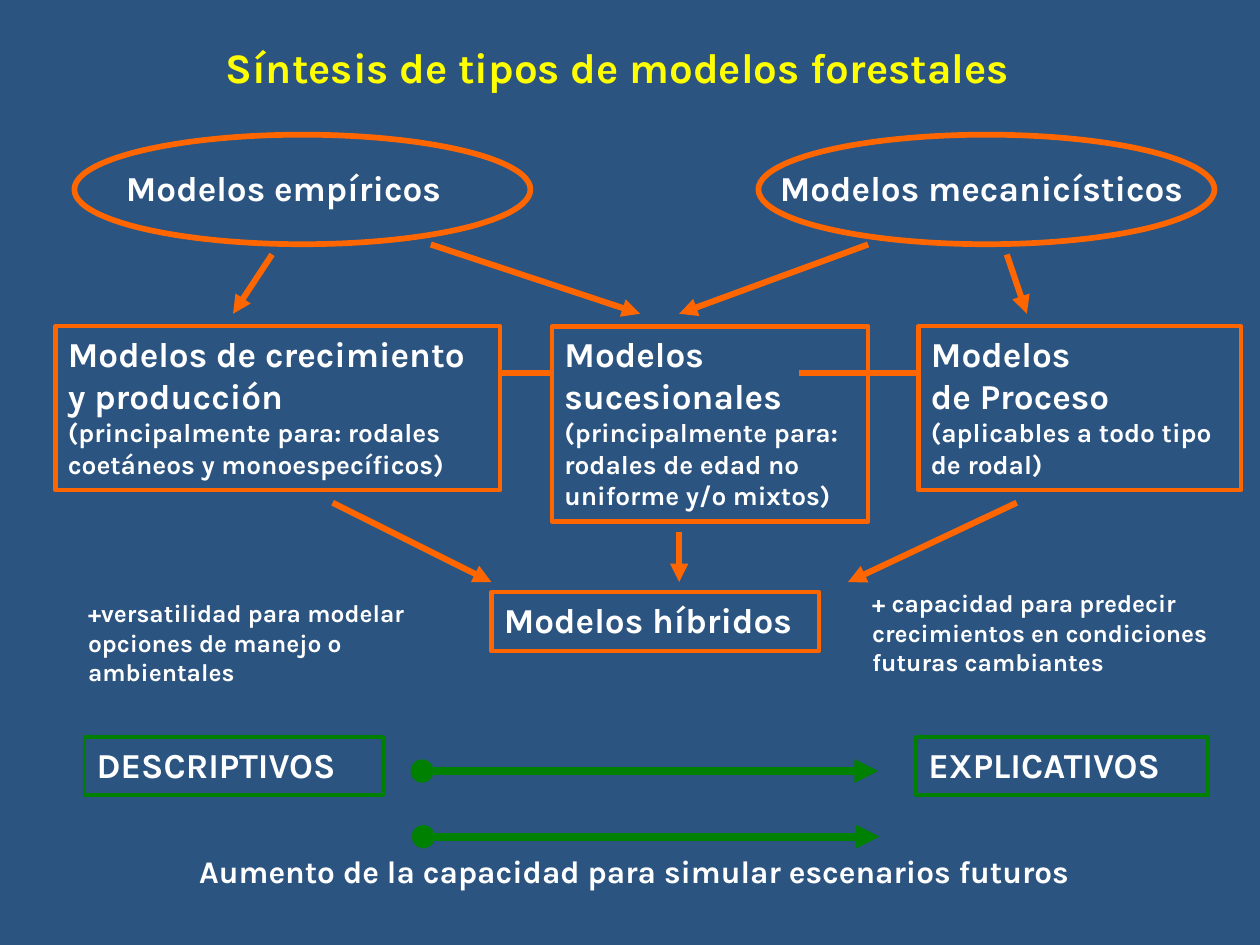
from lxml import etree
from pptx import Presentation
from pptx import util as u
from pptx.dml.color import RGBColor
from pptx.enum import shapes, text
from pptx.oxml.ns import qn

BLUE, ORANGE, GREEN = "2B5481", "FF6600", "008000"
WHITE, YELLOW = "FFFFFF", "FFFF00"
FONT = "Karla"
LEFT, CENTER = text.PP_ALIGN.LEFT, text.PP_ALIGN.CENTER

# Plain text: left, top, width, height, size, colour, alignment, wording
LABELS = [
    (121.7, 20.2, 483, 36, 24, YELLOW, LEFT, "Síntesis de tipos de modelos forestales"),
    (64.8, 91.4, 201, 31, 20, WHITE, LEFT, "Modelos empíricos"),
    (438.5, 91.4, 250, 31, 20, WHITE, LEFT, "Modelos mecanicísticos"),
    (43.2, 338.4, 215.3, 57.6, 14, WHITE, LEFT,
     "+versatilidad para modelar opciones de manejo o ambientales"),
    (491.3, 332.6, 215.3, 57.6, 14, WHITE, LEFT,
     "+ capacidad para predecir crecimientos en condiciones futuras cambiantes"),
    (19.4, 483.1, 686.2, 28.8, 18, WHITE, CENTER,
     "Aumento de la capacidad para simular escenarios futuros"),
]

# Framed boxes: left, top, width, height, line colour, line width, headings, details
BOXES = [
    (31.7, 186.5, 254.2, 93.6, ORANGE, 2.5, ["Modelos de crecimiento", "y producción"],
     ["(principalmente para: rodales coetáneos y monoespecíficos)"]),
    (315.4, 186.5, 180.7, 111.6, ORANGE, 2.5, ["Modelos", "sucesionales"],
     ["(principalmente para:", "rodales de edad no", "uniforme y/o mixtos)"]),
    (524.9, 186.5, 184.3, 93.6, ORANGE, 2.5, ["Modelos", "de Proceso"],
     ["(aplicables a todo tipo", "de rodal)"]),
    (280.8, 338.4, 187.2, 33.8, ORANGE, 2.5, ["Modelos híbridos"], []),
    (48.2, 421.2, 170.6, 33.1, GREEN, 2, ["DESCRIPTIVOS"], []),
    (523.4, 421.2, 167, 33.1, GREEN, 2, ["EXPLICATIVOS"], []),
]

ELLIPSE_LEFTS = [42.5, 433.4]
ELLIPSE_TOP, ELLIPSE_WIDTH, ELLIPSE_HEIGHT = 77, 260.6, 62.6

# Lines: x1, y1, x2, y2
MODEL_ARROWS = [
    (155.5, 145.4, 133.2, 179.3),
    (246.2, 139.7, 365.8, 179.3),
    (496.1, 139.7, 388.1, 179.3),
    (575.3, 145.4, 586.8, 179.3),
    (190.1, 287.3, 280.8, 332.6),
    (388.1, 303.8, 388.1, 332.6),
    (581, 287.3, 484.6, 332.6),
]
LINKS = [(286.6, 213.1, 314.6, 213.1), (456.5, 213.1, 524.2, 213.1)]
TREND_ARROWS = [(241.2, 440.6, 501.8, 440.6), (241.9, 478.1, 502.6, 478.1)]


def color(value):
    return RGBColor.from_string(value)


def write(box, lines, ink=WHITE, align=LEFT):
    """Fill a box with (wording, size) lines."""
    frame = box.text_frame
    frame.word_wrap = True
    frame.vertical_anchor = text.MSO_ANCHOR.TOP
    frame.text = "\n".join(wording for wording, _ in lines)
    for para, (_, size) in zip(frame.paragraphs, lines):
        para.alignment = align
        font = para.runs[0].font
        font.name, font.size, font.bold = FONT, u.Pt(size), True
        font.color.rgb = color(ink)


def add_outline(slide, kind, area, ink, weight):
    shape = slide.shapes.add_shape(kind, *map(u.Pt, area))
    shape.shadow.inherit = False
    shape.fill.background()
    shape.line.color.rgb = color(ink)
    shape.line.width = u.Pt(weight)
    return shape


def add_line(slide, ends, ink, weight, head=None, tail=None):
    line = slide.shapes.add_connector(shapes.MSO_CONNECTOR.STRAIGHT, *map(u.Pt, ends))
    line.line.color.rgb = color(ink)
    line.line.width = u.Pt(weight)
    properties = line.line._get_or_add_ln()
    for tag, kind in (("a:headEnd", head), ("a:tailEnd", tail)):
        if kind:
            etree.SubElement(properties, qn(tag), type=kind)
    etree.SubElement(line._element.spPr, qn("a:effectLst"))


def main():
    deck = Presentation()
    deck.slide_width, deck.slide_height = u.Pt(720), u.Pt(540)
    slide = deck.slides.add_slide(deck.slide_layouts[6])
    slide.background.fill.solid()
    slide.background.fill.fore_color.rgb = color(BLUE)

    # Framed models and the two ends of the scale
    for *area, ink, weight, headings, details in BOXES:
        box = add_outline(slide, shapes.MSO_SHAPE.RECTANGLE, area, ink, weight)
        write(box, [(line, 20) for line in headings] + [(line, 15) for line in details])

    # Title, model families and remarks
    for *area, size, ink, align, wording in LABELS:
        box = slide.shapes.add_textbox(*map(u.Pt, area))
        write(box, [(wording, size)], ink, align)

    # Ellipses around the model families
    for left in ELLIPSE_LEFTS:
        area = (left, ELLIPSE_TOP, ELLIPSE_WIDTH, ELLIPSE_HEIGHT)
        add_outline(slide, shapes.MSO_SHAPE.OVAL, area, ORANGE, 3.25)

    # Arrows and links
    for ends in MODEL_ARROWS:
        add_line(slide, ends, ORANGE, 3.5, tail="triangle")
    for ends in LINKS:
        add_line(slide, ends, ORANGE, 3)
    for ends in TREND_ARROWS:
        add_line(slide, ends, GREEN, 4.5, head="oval", tail="triangle")

    deck.save("out.pptx")


if __name__ == "__main__":
    main()
